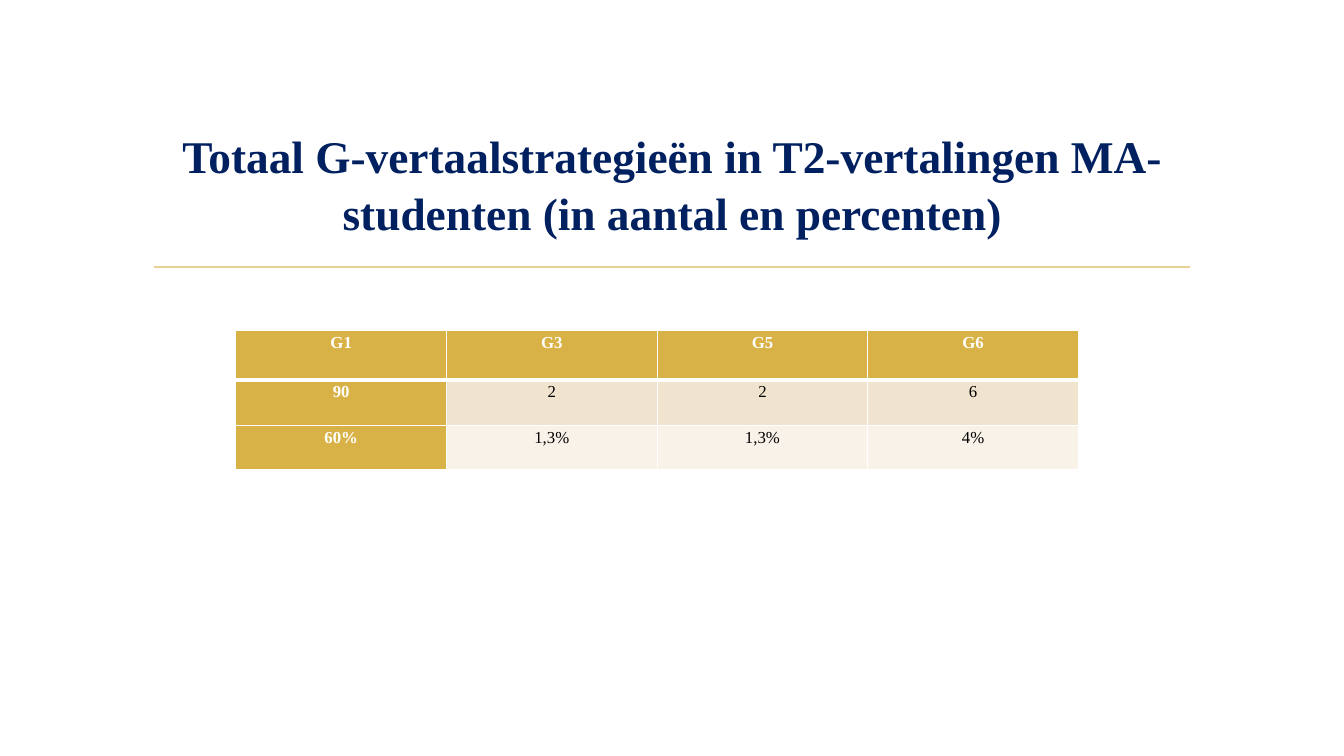
from lxml import etree
from pptx import Presentation
from pptx import util as u
from pptx.dml.color import RGBColor
from pptx.enum import shapes, text
from pptx.oxml import ns

NAVY = RGBColor(0x00, 0x20, 0x60)
GOLD = RGBColor(0xD9, 0xB2, 0x47)
PALE_GOLD = RGBColor(0xE8, 0xD1, 0x91)
SAND = RGBColor(0xF1, 0xE4, 0xCF)
CREAM = RGBColor(0xF8, 0xF2, 0xE9)
WHITE = RGBColor(0xFF, 0xFF, 0xFF)
BLACK = RGBColor(0x00, 0x00, 0x00)

STRATEGIES = [
    ["G1", "G3", "G5", "G6"],
    ["90", "2", "2", "6"],
    ["60%", "1,3%", "1,3%", "4%"],
]
ROW_HEIGHTS = [35.28, 32.4, 31.68]
ROW_FILLS = [GOLD, SAND, CREAM]


def apply(target, values):
    for name, value in values.items():
        setattr(target, name, value)


class SlideBuilder:
    font_name = "Times New Roman"

    def __init__(self, slide):
        self.slide = slide

    def add_text(self, frame, content, size, color, bold, spacing):
        paragraph = frame.paragraphs[0]
        apply(paragraph, {"alignment": text.PP_ALIGN.CENTER, "line_spacing": spacing})
        run = paragraph.add_run()
        run.text = content
        apply(run.font, {"name": self.font_name, "size": u.Pt(size), "bold": bold})
        run.font.color.rgb = color

    def title(self, content, left, top, width, height):
        shape = self.slide.shapes.add_textbox(*map(u.Pt, (left, top, width, height)))
        apply(shape.text_frame, {
            "word_wrap": True,
            "vertical_anchor": text.MSO_ANCHOR.MIDDLE,
            "margin_top": u.Pt(4),
            "margin_bottom": 0,
        })
        self.add_text(shape.text_frame, content, 32.4, NAVY, True, 1.04)

    def rule(self, left, right, top):
        connector = self.slide.shapes.add_connector(
            shapes.MSO_CONNECTOR.STRAIGHT, *map(u.Pt, (left, top, right, top)))
        connector.line.color.rgb = PALE_GOLD
        connector.line.width = u.Pt(1.25)
        etree.SubElement(connector.element.spPr, ns.qn("a:effectLst"))

    def border(self, side, width):
        line = etree.Element(ns.qn(f"a:ln{side}"), w=str(int(u.Pt(width))))
        fill = etree.SubElement(line, ns.qn("a:solidFill"))
        etree.SubElement(fill, ns.qn("a:srgbClr"), val=str(WHITE))
        return line

    def table(self, rows, left, top, column_width):
        columns = len(rows[0])
        table = self.slide.shapes.add_table(
            len(rows), columns, u.Pt(left), u.Pt(top),
            u.Pt(column_width * columns), u.Pt(sum(ROW_HEIGHTS))).table
        for column in table.columns:
            column.width = u.Pt(column_width)
        for row_index, values in enumerate(rows):
            table.rows[row_index].height = u.Pt(ROW_HEIGHTS[row_index])
            for column_index, value in enumerate(values):
                emphasised = row_index == 0 or column_index == 0
                cell = table.cell(row_index, column_index)
                apply(cell, {
                    "margin_left": u.Pt(5), "margin_right": u.Pt(5),
                    "margin_top": 0, "margin_bottom": 0,
                })
                cell.fill.solid()
                cell.fill.fore_color.rgb = GOLD if emphasised else ROW_FILLS[row_index]
                self.add_text(cell.text_frame, value, 12,
                              WHITE if emphasised else BLACK, emphasised, 1.15)
                # The edge below the header is thicker
                widths = {"L": 1, "R": 1, "T": 3 if row_index == 1 else 1,
                          "B": 3 if row_index == 0 else 1}
                properties = cell._tc.get_or_add_tcPr()
                for position, (side, width) in enumerate(widths.items()):
                    properties.insert(position, self.border(side, width))


def main():
    presentation = Presentation()
    presentation.slide_width = u.Pt(960)
    presentation.slide_height = u.Pt(540)
    builder = SlideBuilder(presentation.slides.add_slide(presentation.slide_layouts[6]))

    # Heading and dividing rule
    builder.rule(110.16, 850.32, 190.8)
    builder.title("Totaal G-vertaalstrategieën in T2-vertalingen MA-studenten "
                  "(in aantal en percenten)", 102.24, 77.04, 756, 102.96)

    # Counts and percentages
    builder.table(STRATEGIES, 168.48, 236.16, 150.48)

    presentation.save("out.pptx")


if __name__ == "__main__":
    main()
